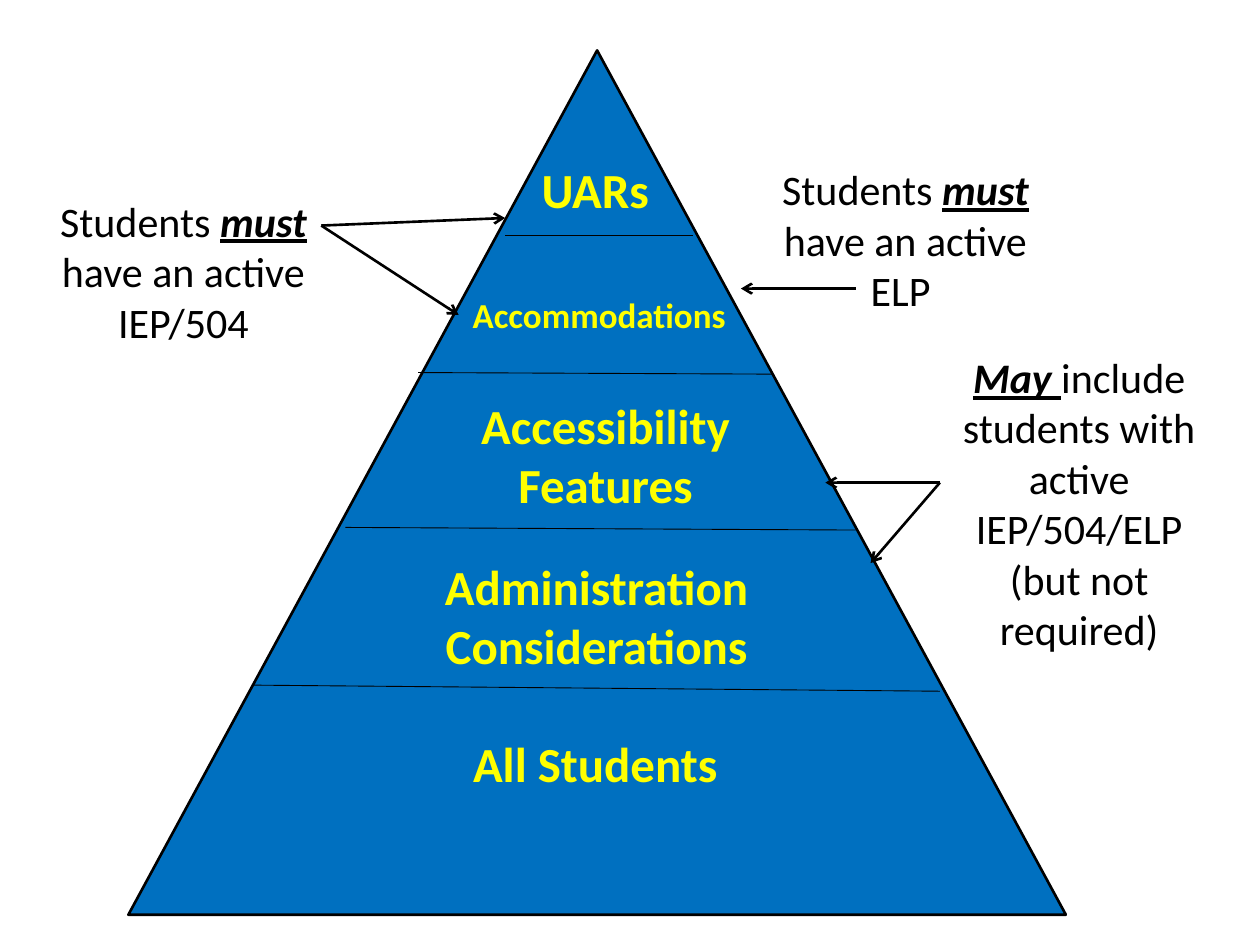
from lxml import etree
from pptx import Presentation
from pptx.dml.color import RGBColor
from pptx.enum.shapes import MSO_CONNECTOR, MSO_SHAPE
from pptx.enum.text import MSO_AUTO_SIZE, PP_ALIGN
from pptx.oxml.ns import qn
from pptx.util import Pt

BLUE = RGBColor(0x00, 0x70, 0xC0)
YELLOW = RGBColor(0xFF, 0xFF, 0x00)
BLACK = RGBColor(0x00, 0x00, 0x00)

prs = Presentation()
prs.slide_width, prs.slide_height = Pt(720), Pt(540)
slide = prs.slides.add_slide(prs.slide_layouts[6])


def add_line(start, end, width, arrow=False):
    line = slide.shapes.add_connector(
        MSO_CONNECTOR.STRAIGHT, *[Pt(v) for v in (*start, *end)])
    line.line.color.rgb = BLACK
    line.line.width = Pt(width)
    etree.SubElement(line._element.spPr, qn("a:effectLst"))
    if arrow:
        etree.SubElement(line.line._get_or_add_ln(), qn("a:tailEnd"), type="arrow")


def add_text(box, runs, size, color, bold=None):
    """Add a centred text box; runs are (text, is_emphasised) pairs."""
    frame = slide.shapes.add_textbox(*[Pt(v) for v in box]).text_frame
    frame.word_wrap = True
    frame.auto_size = MSO_AUTO_SIZE.SHAPE_TO_FIT_TEXT
    paragraph = frame.paragraphs[0]
    paragraph.alignment = PP_ALIGN.CENTER
    paragraph.font.name = "Calibri"
    paragraph.font.size = Pt(size)
    paragraph.font.color.rgb = color
    paragraph.font.bold = bold
    for text, emphasised in runs:
        run = paragraph.add_run()
        run.text = text
        if emphasised:
            run.font.bold = run.font.italic = run.font.underline = True


# Pyramid
pyramid = slide.shapes.add_shape(
    MSO_SHAPE.ISOSCELES_TRIANGLE, Pt(73.4), Pt(28.8), Pt(535.7), Pt(493.9))
pyramid.shadow.inherit = False
pyramid.fill.solid()
pyramid.fill.fore_color.rgb = BLUE
pyramid.line.color.rgb = BLACK
pyramid.line.width = Pt(1.5)

# Dividers between the levels
for start, end in [
    ((288.7, 134.8), (396, 134.8)),
    ((239, 212.9), (442.1, 213.8)),
    ((197.3, 301.4), (488.9, 302.9)),
    ((144, 391.5), (537.1, 395)),
]:
    add_line(start, end, 0.5)

# Level names, top to bottom
for name, box, size in [
    ("UARs", (262.1, 87.8, 156.2, 41), 28),
    ("Accommodations", (262.1, 164.2, 160.6, 31.7), 20),
    ("Accessibility Features", (254.2, 222.5, 183.6, 74.9), 28),
    ("Administration Considerations", (239, 314.6, 203.8, 74.9), 28),
    ("All Students", (262.1, 415.4, 156.2, 41), 28),
]:
    add_text(box, [(name, False)], size, YELLOW, bold=True)

# Notes on who belongs to the levels
NOTE_WIDTH = 159.1
for left, top, height, runs in [
    (25.2, 108, 94.3,
     [("Students ", False), ("must ", True), ("have an active IEP/504", False)]),
    (437.8, 90, 94.3,
     [("Students ", False), ("must ", True), ("have an active ELP ", False)]),
    (537.1, 197.3, 181.4,
     [("May ", True),
      ("include students with active IEP/504/ELP (but not required)", False)]),
]:
    add_text((left, top, NOTE_WIDTH, height), runs, 24, BLACK)

# Arrows from each note to its levels
for start, tips in [
    ((183.6, 128.9), [(288.7, 124.6), (262.1, 180)]),
    ((488.9, 164.9), [(423.4, 164.9)]),
    ((537.1, 275.8), [(471.6, 275.8), (497.5, 321.8)]),
]:
    for tip in tips:
        add_line(start, tip, 1.5, arrow=True)

prs.save("out.pptx")
